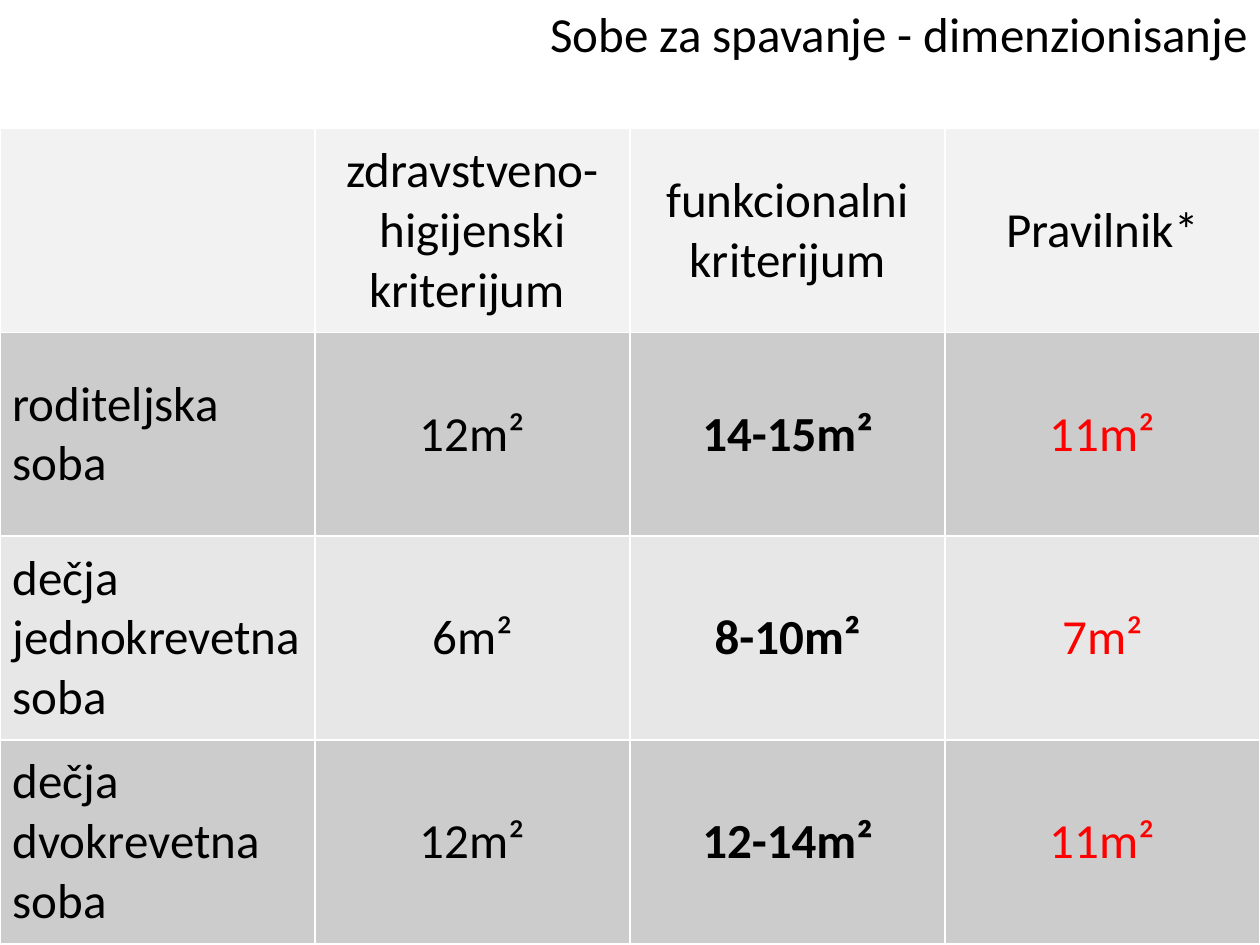
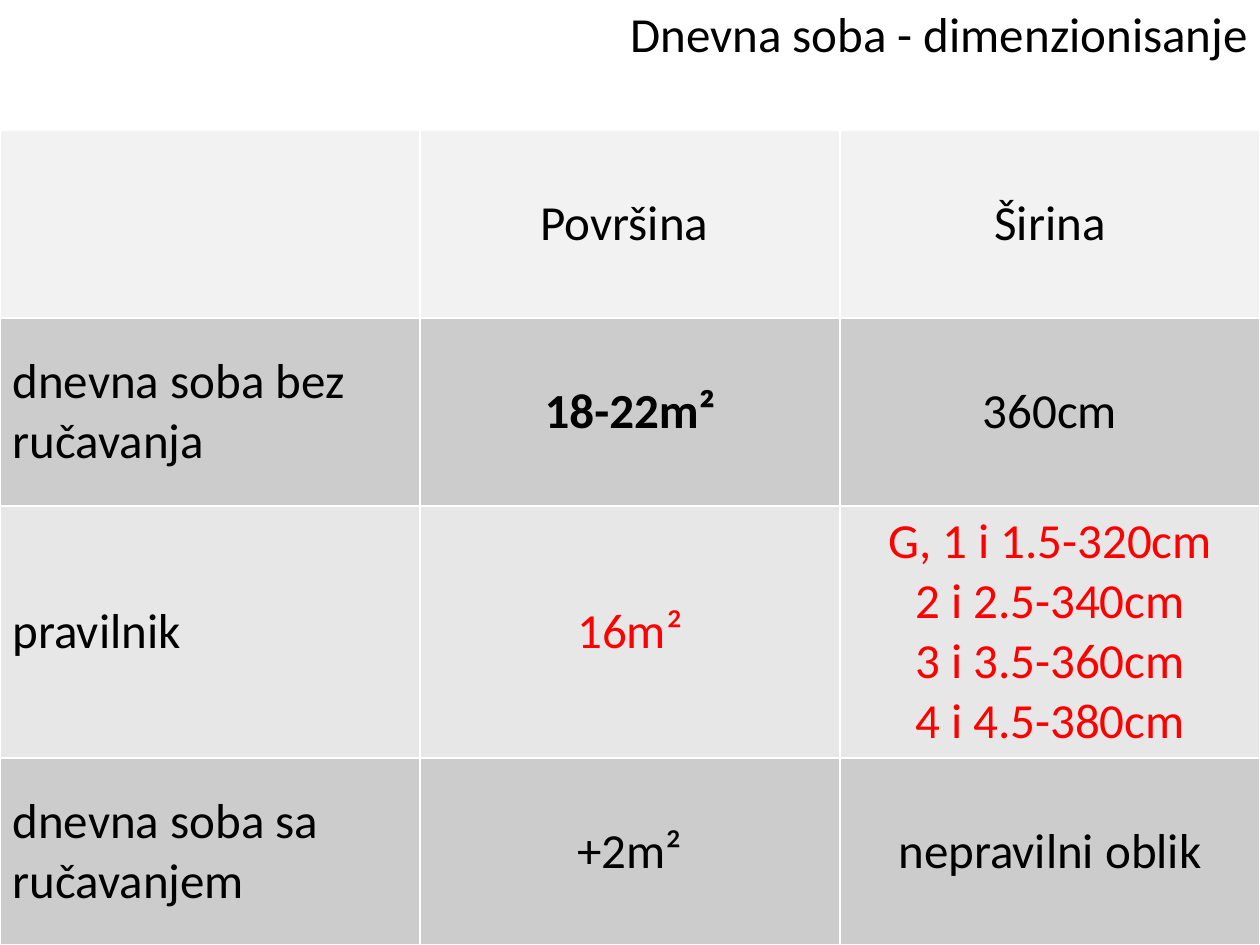
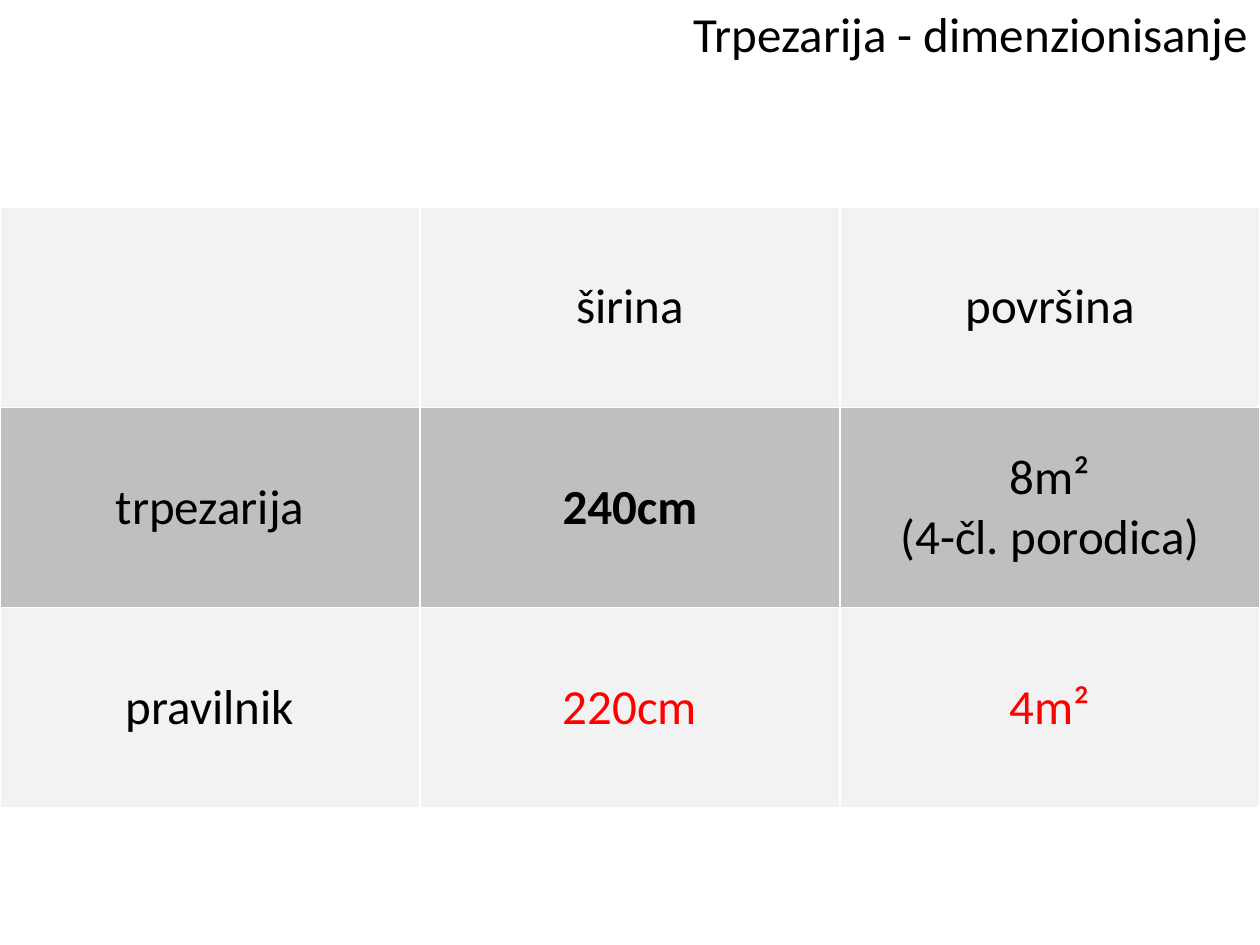
"""Build three slides of room dimensioning tables."""
from pptx import Presentation, util as u
from pptx.dml import color
from pptx.enum import text

WIDTH, HEIGHT = 25.4, 19.05
BLACK, RED = "000000", "FF0000"
HEADER, DARK, LIGHT, MID = "F2F2F2", "CCCCCC", "E7E7E7", "BFBFBF"
LEFT, CENTER, RIGHT = text.PP_ALIGN.LEFT, text.PP_ALIGN.CENTER, text.PP_ALIGN.RIGHT
BASE = {"name": "Calibri", "size": u.Pt(28), "bold": False}
PLAIN, STRONG, RULE = (BLACK, False), (BLACK, True), (RED, False)


def rgb(value):
    return color.RGBColor.from_string(value)


def write(frame, content, align, style=PLAIN):
    ink, bold = style
    for index, line in enumerate(content.split("\n")):
        para = frame.paragraphs[0] if index == 0 else frame.add_paragraph()
        para.alignment = align
        span = para.add_run()
        span.text = line
        for key, value in {**BASE, "bold": bold}.items():
            setattr(span.font, key, value)
        span.font.color.rgb = rgb(ink)


rooms = [
    {
        "title": "Sobe za spavanje - dimenzionisanje",
        "top": 2.59,
        "heights": [4.11] * 4,
        "fills": [HEADER, DARK, LIGHT, DARK],
        "label_align": LEFT,
        "rows": [
            ["", "zdravstveno-higijenski kriterijum ", "funkcionalni kriterijum", "Pravilnik*"],
            ["roditeljska soba", "12m²", "14-15m²", "11m²"],
            ["dečja jednokrevetna soba", "6m²", "8-10m²", "7m²"],
            ["dečja dvokrevetna soba", "12m²", "12-14m²", "11m²"],
        ],
        "styles": {
            **{(row, 2): STRONG for row in (1, 2, 3)},
            **{(row, 3): RULE for row in (1, 2, 3)},
        },
    },
    {
        "title": "Dnevna soba - dimenzionisanje",
        "top": 2.62,
        "heights": [3.79, 3.79, 5.08, 3.77],
        "fills": [HEADER, DARK, LIGHT, DARK],
        "label_align": LEFT,
        "rows": [
            ["", "Površina ", "Širina"],
            ["dnevna soba bez ručavanja", "18-22m²", "360cm"],
            ["pravilnik", "16m²",
             "G, 1 i 1.5-320cm\n2 i 2.5-340cm\n3 i 3.5-360cm\n4 i 4.5-380cm"],
            ["dnevna soba sa ručavanjem", "+2m²", "nepravilni oblik"],
        ],
        "styles": {(1, 1): STRONG, (2, 1): RULE, (2, 2): RULE},
    },
    {
        "title": "Trpezarija - dimenzionisanje",
        "top": 4.17,
        "heights": [4.04] * 3,
        "fills": [HEADER, MID, HEADER],
        "label_align": CENTER,
        "rows": [
            ["", "širina", "površina"],
            ["trpezarija", "240cm", "8m²\n(4-čl. porodica)"],
            ["pravilnik", "220cm", "4m²"],
        ],
        "styles": {(1, 1): STRONG, (2, 1): RULE, (2, 2): RULE},
    },
]

deck = Presentation()
deck.slide_width, deck.slide_height = u.Cm(WIDTH), u.Cm(HEIGHT)

for room in rooms:
    page = deck.slides.add_slide(deck.slide_layouts[6])
    box = page.shapes.add_textbox(0, 0, u.Cm(WIDTH), u.Cm(HEIGHT))
    layout = {"word_wrap": True, "margin_top": u.Cm(0.08),
              "vertical_anchor": text.MSO_ANCHOR.TOP}
    for key, value in layout.items():
        setattr(box.text_frame, key, value)
    write(box.text_frame, room["title"], RIGHT)

    rows, heights = room["rows"], room["heights"]
    table = page.shapes.add_table(
        len(rows), len(rows[0]), 0, u.Cm(room["top"]), u.Cm(WIDTH), u.Cm(sum(heights))
    ).table
    for r, (values, height, fill) in enumerate(zip(rows, heights, room["fills"])):
        table.rows[r].height = u.Cm(height)
        for c, value in enumerate(values):
            cell = table.cell(r, c)
            cell.vertical_anchor = text.MSO_ANCHOR.MIDDLE
            cell.fill.solid()
            cell.fill.fore_color.rgb = rgb(fill)
            if value:
                align = CENTER if c else room["label_align"]
                write(cell.text_frame, value, align, room["styles"].get((r, c), PLAIN))

deck.save("out.pptx")
